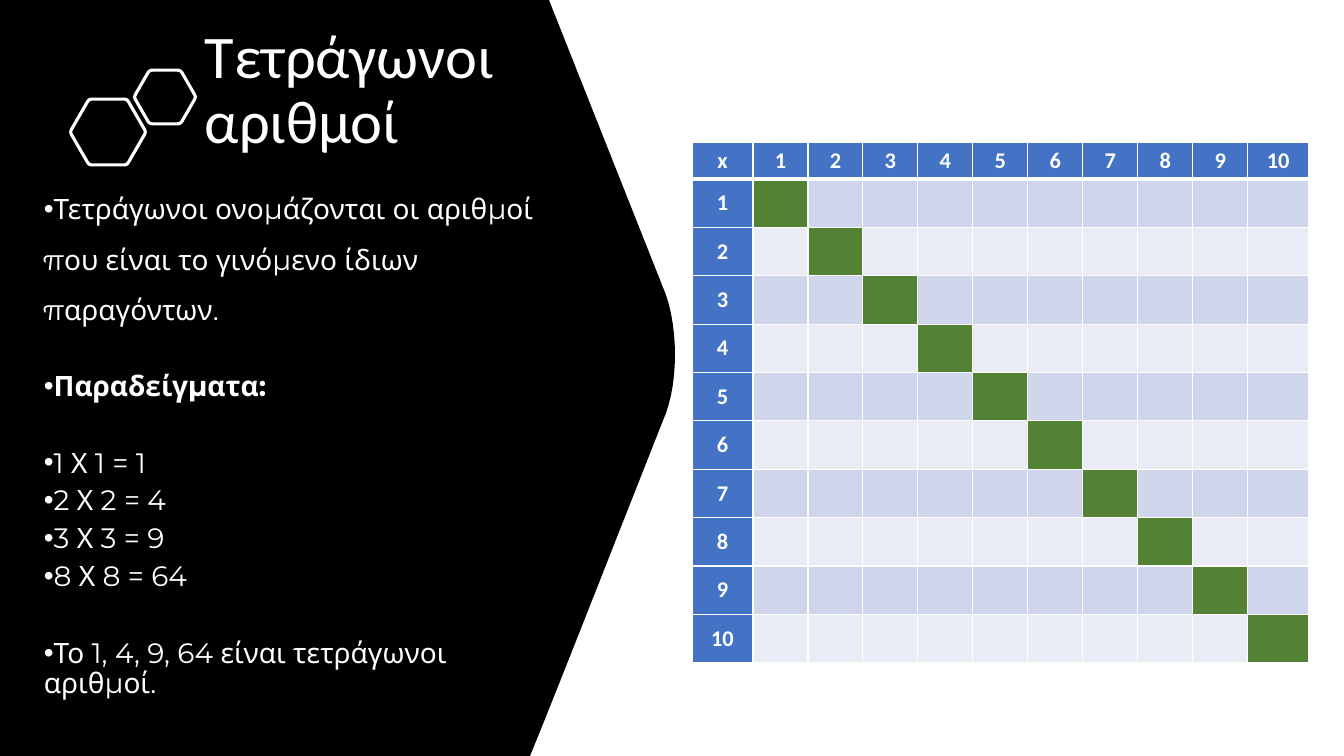
from math import cos, pi, sin

from pptx import Presentation
from pptx.dml.color import RGBColor
from pptx.enum.text import MSO_ANCHOR as Anchor, PP_ALIGN as Align
from pptx.oxml import parse_xml
from pptx.oxml.ns import nsdecls
from pptx.util import Emu, Pt

# Content
TITLE = "Τετράγωνοι αριθμοί"
# (text, bold, line spacing, space after in points)
BODY = [
    ("Τετράγωνοι ονομάζονται οι αριθμοί που είναι το γινόμενο ίδιων παραγόντων.",
     False, 1.5, 33),
    ("Παραδείγματα:", True, 0.9, 33),
    ("1 Χ 1 = 1", False, 0.9, 5.5),
    ("2 Χ 2 = 4", False, 0.9, 5.5),
    ("3 Χ 3 = 9", False, 0.9, 5.5),
    ("8 Χ 8 = 64", False, 0.9, 33),
    ("Το 1, 4, 9, 64 είναι τετράγωνοι αριθμοί.", False, 0.9, 0),
]
CORNER = "x"
N = 10


class Theme:
    panel = "000000"
    light = "FFFFFF"
    header = "4472C4"
    square = "548235"
    bands = ("E9EBF5", "CFD5EA")
    font = "Calibri"
    body_font = "Montserrat"
    title_size, body_size, table_size = 43.2, 20, 16
    outline, border, header_border = 2.25, 1, 3


# Layout, in px
PX = 914400 / 100.8
SLIDE = (1344, 756)
TITLE_BOX = (195, 15, 457, 147)
BODY_BOX = (34, 170, 526, 563)
HEXAGONS = [(108, 132, 38), (165, 97, 31)]  # centre x, centre y, radius
ROUNDING = 3
TABLE_AT = (692, 142)
END_COL, MID_COL = 61, 55
HEAD_ROW, BODY_ROWS = 37, 484
CELL_INSET = 6


def emu(px):
    return Emu(round(px * PX))


def rgb(value):
    return RGBColor.from_string(value)


def curve(*controls, steps=12):
    """Points along the Bezier curve with these control points."""
    points = []
    for i in range(steps + 1):
        t, level = i / steps, controls
        while len(level) > 1:
            level = [(a + (c - a) * t, b + (d - b) * t)
                     for (a, b), (c, d) in zip(level, level[1:])]
        points.append(level[0])
    return points


def outline(shapes, points):
    corners = [(emu(x), emu(y)) for x, y in points]
    builder = shapes.build_freeform(*corners[0])
    builder.add_line_segments(corners[1:], close=True)
    sp = builder.convert_to_shape()
    sp.shadow.inherit = False
    return sp


def hexagon(cx, cy, radius):
    corners = [(cx + radius * cos(k * pi / 3), cy + radius * sin(k * pi / 3))
               for k in range(6)]
    points = []
    for k, (x, y) in enumerate(corners):
        start, end = [(x + (a - x) * ROUNDING / radius, y + (b - y) * ROUNDING / radius)
                      for a, b in (corners[k - 1], corners[(k + 1) % 6])]
        points += curve(start, (x, y), end, steps=4)
    return points


def add_run(p, text, font, size, bold=False):
    r = p.add_run()
    r.text = text
    r.font.name, r.font.size, r.font.bold = font, Pt(size), bold
    r.font.color.rgb = rgb(Theme.light)


def text_frame(slide, box, anchor):
    tf = slide.shapes.add_textbox(*map(emu, box)).text_frame
    tf.word_wrap = True
    tf.vertical_anchor = anchor
    return tf


def add_bullet(p):
    pPr = p._p.get_or_add_pPr()
    pPr.set("marL", "0")
    pPr.set("indent", "-228600")
    pPr.append(parse_xml(f'<a:buFont {nsdecls("a")} typeface="Arial"/>'))
    pPr.append(parse_xml(f'<a:buChar {nsdecls("a")} char="•"/>'))


def style_cell(cell, color, top, bottom):
    tcPr = cell._tc.get_or_add_tcPr()
    sides = {"L": Theme.border, "R": Theme.border, "T": top, "B": bottom}
    for side, width in sides.items():
        tcPr.append(parse_xml(
            f'<a:ln{side} {nsdecls("a")} w="{Pt(width)}"><a:solidFill>'
            f'<a:srgbClr val="{Theme.light}"/></a:solidFill></a:ln{side}>'))
    cell.fill.solid()
    cell.fill.fore_color.rgb = rgb(color)


def add_panel(slide):
    points = [(0, 0), (549, 0)]
    points += curve((666, 295), (678, 330), (678, 380), (666, 413))
    points += curve((666, 413), (613, 547), (572, 652), (539, 734))
    points += [(530, 756), (0, 756)]
    sp = outline(slide.shapes, points)
    sp.fill.solid()
    sp.fill.fore_color.rgb = rgb(Theme.panel)
    sp.line.fill.background()


def add_hexagons(slide):
    group = slide.shapes.add_group_shape()
    for place in HEXAGONS:
        sp = outline(group.shapes, hexagon(*place))
        sp.fill.background()
        sp.line.color.rgb = rgb(Theme.light)
        sp.line.width = Pt(Theme.outline)


def add_texts(slide):
    p = text_frame(slide, TITLE_BOX, Anchor.BOTTOM).paragraphs[0]
    p.line_spacing = 0.9
    add_run(p, TITLE, Theme.font, Theme.title_size)

    tf = text_frame(slide, BODY_BOX, Anchor.TOP)
    for i, (text, bold, spacing, after) in enumerate(BODY):
        p = tf.add_paragraph() if i else tf.paragraphs[0]
        add_bullet(p)
        p.line_spacing, p.space_after = spacing, Pt(after)
        add_run(p, text, Theme.body_font, Theme.body_size, bold)


def add_grid(slide):
    widths = [END_COL] + [MID_COL] * (N - 1) + [END_COL]
    heights = [HEAD_ROW] + [BODY_ROWS / N] * N
    table = slide.shapes.add_table(
        N + 1, N + 1, *map(emu, (*TABLE_AT, sum(widths), sum(heights)))).table
    for col, width in zip(table.columns, widths):
        col.width = emu(width)
    for row, height in zip(table.rows, heights):
        row.height = emu(height)

    for r in range(N + 1):
        top = Theme.header_border if r == 1 else Theme.border
        bottom = Theme.header_border if r == 0 else Theme.border
        for c in range(N + 1):
            cell = table.cell(r, c)
            if r and c:
                style_cell(cell, Theme.square if r == c else Theme.bands[r % 2], top, bottom)
                continue
            style_cell(cell, Theme.header, top, bottom)
            cell.margin_left = cell.margin_right = emu(CELL_INSET)
            cell.margin_top = cell.margin_bottom = 0
            cell.vertical_anchor = Anchor.MIDDLE
            p = cell.text_frame.paragraphs[0]
            p.alignment = Align.CENTER
            add_run(p, str(r + c) if r + c else CORNER, Theme.font, Theme.table_size, True)


def main():
    prs = Presentation()
    prs.slide_width, prs.slide_height = map(emu, SLIDE)
    slide = prs.slides.add_slide(prs.slide_layouts[6])
    add_panel(slide)
    add_hexagons(slide)
    add_texts(slide)
    add_grid(slide)
    prs.save("out.pptx")


if __name__ == "__main__":
    main()
